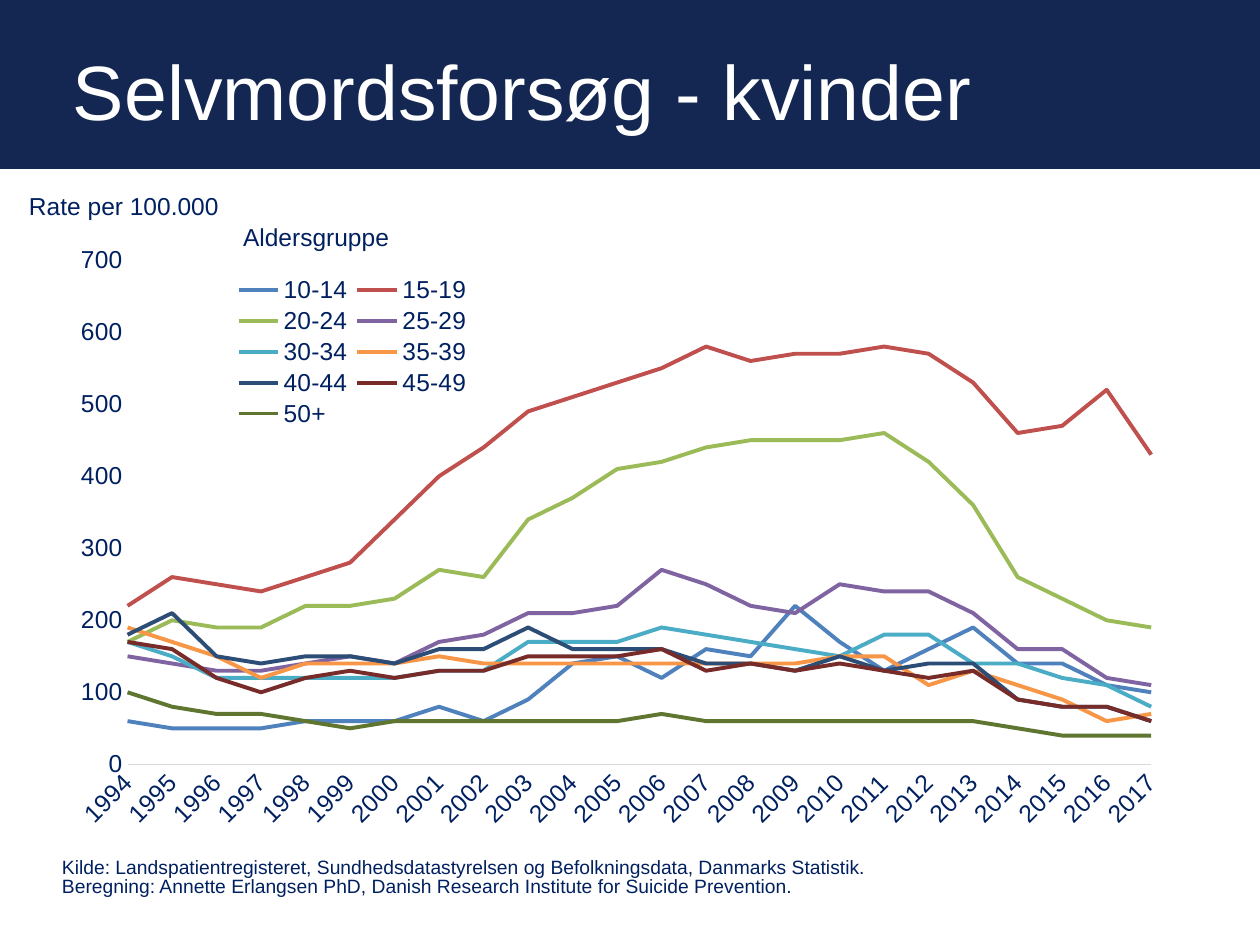
"""Build a line chart slide of suicide attempt rates, filling each GAP evenly to the nearest ten."""
from lxml import etree
from pptx import Presentation
from pptx import util as u
from pptx.chart import data as chart_data
from pptx.dml.color import RGBColor
from pptx.enum import chart as charts, shapes, text
from pptx.oxml import ns

PX = 914400 / 126
FONT = "Arial"
BODY = 14
BAND = RGBColor.from_string("142752")
NAVY = RGBColor.from_string("002060")
WHITE = RGBColor.from_string("FFFFFF")
AXIS_GREY = RGBColor.from_string("D9D9D9")
GAP = None

AGE_GROUPS = [
    ("10-14", RGBColor.from_string("4F81BD"),
     [60, 50, GAP, GAP, GAP, GAP, 60, 80, 60, 90, 140, 150,
      120, 160, 150, 220, 170, 130, 160, 190, 140, 140, 110, 100]),
    ("15-19", RGBColor.from_string("C0504D"),
     [220, 260, GAP, 240, GAP, 280, GAP, 400, GAP, 490, GAP, GAP,
      550, 580, 560, GAP, GAP, 580, 570, 530, 460, 470, 520, 430]),
    ("20-24", RGBColor.from_string("9BBB59"),
     [170, 200, 190, 190, 220, GAP, 230, 270, 260, 340, 370, 410,
      GAP, 440, 450, GAP, 450, 460, 420, 360, 260, 230, 200, 190]),
    ("25-29", RGBColor.from_string("8064A2"),
     [150, GAP, 130, 130, GAP, 150, 140, 170, 180, 210, 210, 220,
      270, 250, 220, 210, 250, GAP, 240, 210, 160, 160, 120, 110]),
    ("30-34", RGBColor.from_string("4BACC6"),
     [170, 150, 120, GAP, GAP, GAP, 120, 130, 130, 170, GAP, 170,
      190, GAP, GAP, GAP, 150, 180, 180, 140, 140, 120, 110, 80]),
    ("35-39", RGBColor.from_string("F79646"),
     [190, 170, 150, 120, 140, GAP, 140, 150, 140, GAP, GAP, GAP,
      GAP, GAP, GAP, 140, 150, 150, 110, 130, GAP, 90, 60, 70]),
    ("40-44", RGBColor.from_string("2C4D75"),
     [180, 210, 150, 140, 150, 150, 140, 160, 160, 190, 160, GAP,
      160, 140, 140, 130, 150, 130, 140, 140, 90, 80, 80, 60]),
    ("45-49", RGBColor.from_string("772C2A"),
     [170, 160, 120, 100, 120, 130, 120, 130, 130, 150, GAP, 150,
      160, 130, 140, 130, 140, 130, 120, 130, 90, 80, 80, 60]),
    ("50+", RGBColor.from_string("5F7530"),
     [100, 80, 70, 70, 60, 50, 60, GAP, GAP, GAP, GAP, 60,
      70, 60, GAP, GAP, GAP, GAP, GAP, 60, 50, 40, GAP, 40]),
]


def add_text(slide, bounds, lines, size, color, inset, spacings, anchor):
    box = slide.shapes.add_textbox(*[round(value * PX) for value in bounds])
    frame = box.text_frame
    frame.word_wrap = True
    frame.vertical_anchor = anchor
    frame.margin_left, frame.margin_top, frame.margin_right, frame.margin_bottom = [
        round(value * PX) for value in inset]
    for index, (line, spacing) in enumerate(zip(lines, spacings)):
        para = frame.add_paragraph() if index else frame.paragraphs[0]
        para.line_spacing = spacing
        span = para.add_run()
        span.text = line
        span.font.name = FONT
        span.font.size = u.Pt(size)
        span.font.color.rgb = color


def make_layout(fractions, inner):
    layout = etree.Element(ns.qn("c:layout"))
    manual = etree.SubElement(layout, ns.qn("c:manualLayout"))
    settings = [("layoutTarget", "inner")] if inner else []
    settings += [("xMode", "edge"), ("yMode", "edge")]
    settings += list(zip("xywh", fractions))
    for name, value in settings:
        etree.SubElement(manual, ns.qn("c:" + name)).set("val", str(value))
    return layout


deck = Presentation()
deck.slide_width = u.Inches(10)
deck.slide_height = u.Inches(7.5)
page = deck.slides.add_slide(deck.slide_layouts[6])

band = page.shapes.add_shape(shapes.MSO_SHAPE.RECTANGLE, 0, 0, deck.slide_width, round(169 * PX))
band.shadow.inherit = False
band.fill.solid()
band.fill.fore_color.rgb = BAND
band.line.fill.background()

add_text(page, (60, 11, 1134, 158), ["Selvmordsforsøg - kvinder"], 44, WHITE,
         (13, 6, 13, 6), [1.0], text.MSO_ANCHOR.MIDDLE)

rates = chart_data.CategoryChartData(number_format="0")
rates.categories = [str(year) for year in range(1994, 2018)]
for name, color, values in AGE_GROUPS:
    known = [index for index, value in enumerate(values) if value is not GAP]
    for start, end in zip(known, known[1:]):
        step = (values[end] - values[start]) / (end - start)
        for index in range(start + 1, end):
            values[index] = int(round(values[start] + step * (index - start), -1))
    rates.add_series(name, values)
chart = page.shapes.add_chart(
    charts.XL_CHART_TYPE.LINE, *[round(value * PX) for value in (60, 234, 1125, 655)], rates).chart
chart.has_title = False
for series, (name, color, values) in zip(chart.plots[0].series, AGE_GROUPS):
    series.smooth = False
    series.format.line.color.rgb = color
    series.format.line.width = u.Pt(2.25)
    series.marker.style = charts.XL_MARKER_STYLE.NONE

chart.has_legend = True
legend = chart.legend
legend.position = charts.XL_LEGEND_POSITION.BOTTOM
legend.include_in_layout = False

year_axis, rate_axis = chart.category_axis, chart.value_axis
for axis in (year_axis, rate_axis):
    axis.has_major_gridlines = False
    axis.major_tick_mark = axis.minor_tick_mark = charts.XL_TICK_MARK.NONE
for font in (chart.font, legend.font, year_axis.tick_labels.font, rate_axis.tick_labels.font):
    font.name = FONT
    font.size = u.Pt(BODY)
    font.color.rgb = NAVY
year_axis.format.line.color.rgb = AXIS_GREY
year_axis.format.line.width = u.Pt(0.75)
year_axis._element.find(ns.qn("c:txPr")).find(ns.qn("a:bodyPr")).set("rot", "-2700000")
rate_axis.format.line.fill.background()
rate_axis.minimum_scale, rate_axis.maximum_scale, rate_axis.major_unit = 0, 700, 100
rate_axis.tick_labels.number_format = "0"
rate_axis.tick_labels.number_format_is_linked = False

crossing = rate_axis._element.find(ns.qn("c:crossBetween"))
if crossing is None:
    crossing = etree.Element(ns.qn("c:crossBetween"))
    rate_axis._element.find(ns.qn("c:crosses")).addnext(crossing)
crossing.set("val", "midCat")

plot_area = chart._chartSpace.find(".//" + ns.qn("c:plotArea"))
for part in (plot_area, legend._element):
    for layout in part.findall(ns.qn("c:layout")):
        part.remove(layout)
plot_area.insert(0, make_layout((0.06, 0.04, 0.91, 0.77), True))
legend._element.find(ns.qn("c:legendPos")).addnext(make_layout((0.15, 0.06, 0.22, 0.24), False))

SOURCE = [
    "Kilde: Landspatientregisteret, Sundhedsdatastyrelsen og Befolkningsdata, Danmarks Statistik.",
    "Beregning: Annette Erlangsen PhD, Danish Research Institute for Suicide Prevention.",
]
for bounds, lines, size in [
    ((25, 195, 265, 53), ["Rate per 100.000"], BODY),
    ((58, 853, 1046, 50), SOURCE, 11),
    ((239, 226, 173, 53), ["Aldersgruppe"], BODY),
]:
    add_text(page, bounds, lines, size, NAVY, (4, 4, 0, 0), [u.Pt(12), u.Pt(11)],
             text.MSO_ANCHOR.TOP)

deck.save("out.pptx")
